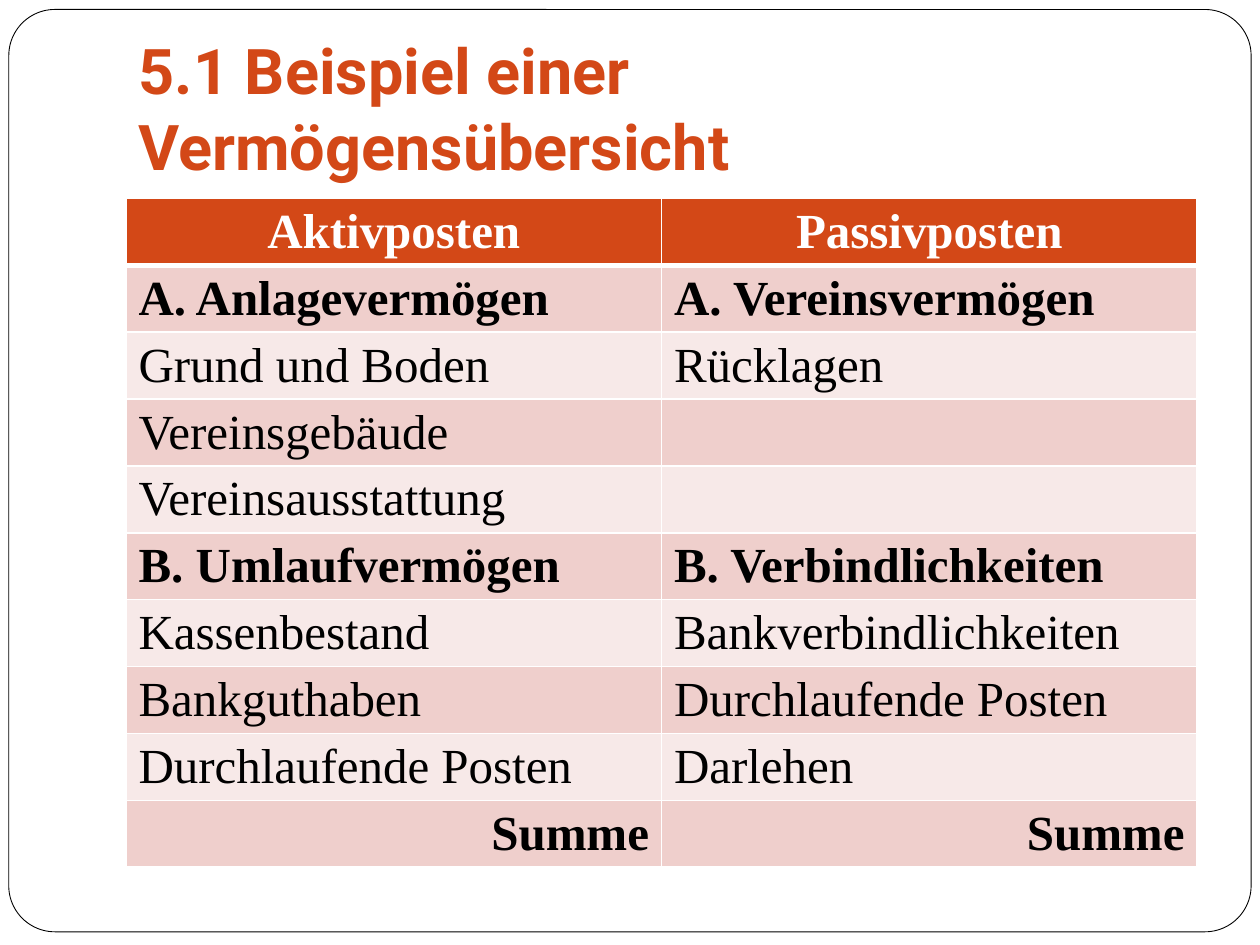
from lxml import etree
from pptx import Presentation
from pptx import util as u
from pptx.dml.color import RGBColor
from pptx.enum import shapes, text
from pptx.oxml import ns

WHITE = RGBColor(0xFF, 0xFF, 0xFF)
BLACK = RGBColor(0, 0, 0)
ORANGE = RGBColor(0xD3, 0x48, 0x17)
ROSE = RGBColor(0xEF, 0xCF, 0xCC)
PALE_ROSE = RGBColor(0xF7, 0xE9, 0xE8)

WIDTH, HEIGHT = 10, 7.5
LEFT, CONTENT_WIDTH = 0.1, 0.85

ROWS = [
    ("Aktivposten", "Passivposten"),
    ("A. Anlagevermögen", "A. Vereinsvermögen"),
    ("Grund und Boden", "Rücklagen"),
    ("Vereinsgebäude", ""),
    ("Vereinsausstattung", ""),
    ("B. Umlaufvermögen", "B. Verbindlichkeiten"),
    ("Kassenbestand", "Bankverbindlichkeiten"),
    ("Bankguthaben", "Durchlaufende Posten"),
    ("Durchlaufende Posten", "Darlehen"),
    ("Summe", "Summe"),
]
BOLD_ROWS = {0, 1, 5, len(ROWS) - 1}
ALIGNMENTS = {0: text.PP_ALIGN.CENTER, len(ROWS) - 1: text.PP_ALIGN.RIGHT}


class SlideBuilder:
    title_font = "Roboto"
    body_font = "Times New Roman"

    def __init__(self, deck):
        self.page = deck.slides.add_slide(deck.slide_layouts[5])

    def area(self, left, top, width, height):
        return (u.Inches(left * WIDTH), u.Inches(top * HEIGHT),
                u.Inches(width * WIDTH), u.Inches(height * HEIGHT))

    def style(self, para, font, size, color, bold, alignment):
        para.alignment = alignment
        para.font.name = font
        para.font.size = u.Pt(size)
        para.font.bold = bold
        para.font.color.rgb = color

    def frame(self, *shares):
        box = self.page.shapes.add_shape(
            shapes.MSO_SHAPE.ROUNDED_RECTANGLE, *self.area(*shares))
        box.adjustments[0] = 0.05
        box.shadow.inherit = False
        box.fill.solid()
        box.fill.fore_color.rgb = WHITE
        box.line.color.rgb = BLACK
        box.line.width = u.Pt(0.5)
        box.element.getparent().insert(2, box.element)

    def title(self, wording, *shares):
        box = self.page.shapes.title
        box.left, box.top, box.width, box.height = self.area(*shares)
        frame = box.text_frame
        frame.text = wording
        frame.word_wrap = True
        frame.auto_size = text.MSO_AUTO_SIZE.NONE
        frame.vertical_anchor = text.MSO_ANCHOR.BOTTOM
        frame.margin_left = frame.margin_right = u.Inches(0.1)
        frame.margin_top, frame.margin_bottom = u.Inches(0.05), u.Inches(0.1)
        self.style(frame.paragraphs[0], self.title_font, 36, ORANGE, True,
                   text.PP_ALIGN.LEFT)

    def borders(self, cell, bottom):
        properties = cell._tc.get_or_add_tcPr()
        widths = {"a:lnL": 1, "a:lnR": 1, "a:lnT": 1, "a:lnB": bottom}
        for index, (tag, width) in enumerate(widths.items()):
            line = etree.Element(ns.qn(tag), w=str(u.Pt(width)))
            fill = etree.SubElement(line, ns.qn("a:solidFill"))
            etree.SubElement(fill, ns.qn("a:srgbClr"), val=str(WHITE))
            properties.insert(index, line)

    def table(self, rows, *shares):
        table = self.page.shapes.add_table(
            len(rows), len(rows[0]), *self.area(*shares)).table
        for row, wordings in enumerate(rows):
            header = row == 0
            band = ORANGE if header else ROSE if row % 2 else PALE_ROSE
            for column, wording in enumerate(wordings):
                cell = table.cell(row, column)
                cell.text = wording
                cell.fill.solid()
                cell.fill.fore_color.rgb = band
                self.style(cell.text_frame.paragraphs[0], self.body_font, 28,
                           WHITE if header else BLACK, row in BOLD_ROWS,
                           ALIGNMENTS.get(row, text.PP_ALIGN.LEFT))
                self.borders(cell, 3 if row == 0 else 1)


def main():
    deck = Presentation()
    deck.slide_width, deck.slide_height = u.Inches(WIDTH), u.Inches(HEIGHT)
    slide = SlideBuilder(deck)
    slide.frame(0.007, 0.01, 0.986, 0.976)
    slide.title("5.1 Beispiel einer Vermögensübersicht",
                LEFT, 0.04, CONTENT_WIDTH, 1.25 / HEIGHT)
    slide.table(ROWS, LEFT, 0.21, CONTENT_WIDTH, len(ROWS) * 0.53 / HEIGHT)
    deck.save("out.pptx")


if __name__ == "__main__":
    main()
